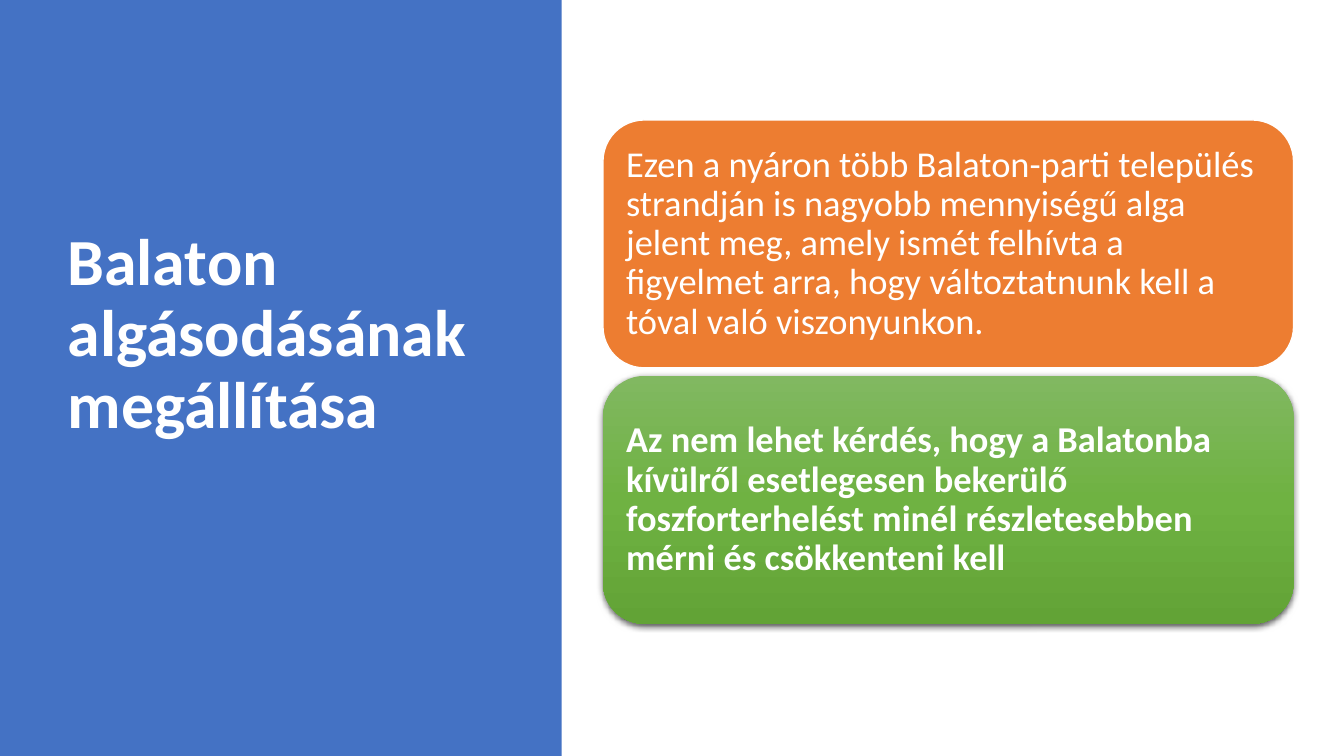
"""Build the slide on stopping algal growth in Lake Balaton."""
import pptx
import pptx.util
import pptx.dml.color
import pptx.enum.shapes
import pptx.enum.text
import pptx.oxml
import pptx.oxml.ns

Inches = pptx.util.Inches
Pt = pptx.util.Pt
RGBColor = pptx.dml.color.RGBColor
Shape = pptx.enum.shapes.MSO_SHAPE
Align = pptx.enum.text.PP_ALIGN
Middle = pptx.enum.text.MSO_ANCHOR.MIDDLE

WHITE = RGBColor(0xFF, 0xFF, 0xFF)
BLUE = RGBColor(0x44, 0x72, 0xC4)
ORANGE = RGBColor(0xED, 0x7D, 0x31)
GREENS = [
    (0, RGBColor(0x81, 0xB8, 0x61)),
    (50, RGBColor(0x6F, 0xB2, 0x42)),
    (100, RGBColor(0x62, 0xA3, 0x36)),
]
BLACK = RGBColor(0, 0, 0)
NS = pptx.oxml.ns.nsdecls("a")


def write(shape, text, size, bold, inset):
    frame = shape.text_frame
    frame.word_wrap = True
    frame.auto_size = pptx.enum.text.MSO_AUTO_SIZE.NONE
    frame.vertical_anchor = Middle
    frame.margin_left = frame.margin_right = Inches(inset)
    frame.margin_top = frame.margin_bottom = Inches(inset)
    para = frame.paragraphs[0]
    para.text = text
    para.alignment = Align.LEFT
    para.line_spacing = 0.9
    para.font.name = "Calibri"
    para.font.size = Pt(size)
    para.font.bold = bold
    para.font.color.rgb = WHITE


def add_box(kind, left, top, width, height):
    box = slide.shapes.add_shape(
        kind, Inches(left), Inches(top), Inches(width), Inches(height))
    box.shadow.inherit = False
    box.line.fill.background()
    return box


deck = pptx.Presentation()
deck.slide_width = Inches(13.33)
deck.slide_height = Inches(7.5)
slide = deck.slides.add_slide(deck.slide_layouts[5])

title = slide.shapes.title
title.left, title.top = Inches(0.57), Inches(0.68)
title.width, title.height = Inches(4.16), Inches(5.3)
write(title, "Balaton algásodásának megállítása", 47, True, 0.1)

panel = add_box(Shape.RECTANGLE, 0, 0, 5.57, 7.5)
panel.fill.solid()
panel.fill.fore_color.rgb = BLUE
title.element.addprevious(panel.element)

notes = [
    ("Ezen a nyáron több Balaton-parti település strandján is nagyobb "
     "mennyiségű alga jelent meg, amely ismét felhívta a figyelmet arra, "
     "hogy változtatnunk kell a tóval való viszonyunkon.", False),
    ("Az nem lehet kérdés, hogy a Balatonba kívülről esetlegesen bekerülő "
     "foszforterhelést minél részletesebben mérni és csökkenteni kell", True),
]
cards = []
for row, (text, bold) in enumerate(notes):
    card = add_box(Shape.ROUNDED_RECTANGLE, 5.98, 1.19 + 2.54 * row, 6.85, 2.46)
    write(card, text, 26, bold, 0.11)
    cards.append(card)

alga, load = cards
alga.fill.solid()
alga.fill.fore_color.rgb = ORANGE
alga.line.color.rgb = WHITE
alga.line.width = Pt(1)

stops = "".join(
    f'<a:gs pos="{place * 1000}"><a:srgbClr val="{shade}"/></a:gs>'
    for place, shade in GREENS)
blend = pptx.oxml.parse_xml(
    f'<a:gradFill {NS} rotWithShape="1"><a:gsLst>{stops}</a:gsLst>'
    '<a:lin ang="5400000" scaled="0"/></a:gradFill>')
load.element.spPr.find(pptx.oxml.ns.qn("a:prstGeom")).addnext(blend)

shade = pptx.oxml.parse_xml(
    f'<a:outerShdw {NS} blurRad="{Pt(4.5)}" dist="{Pt(1.5)}" dir="5400000" '
    f'algn="ctr" rotWithShape="0"><a:srgbClr val="{BLACK}">'
    '<a:alpha val="63000"/></a:srgbClr></a:outerShdw>')
load.element.spPr.find(pptx.oxml.ns.qn("a:effectLst")).append(shade)

deck.save("out.pptx")
